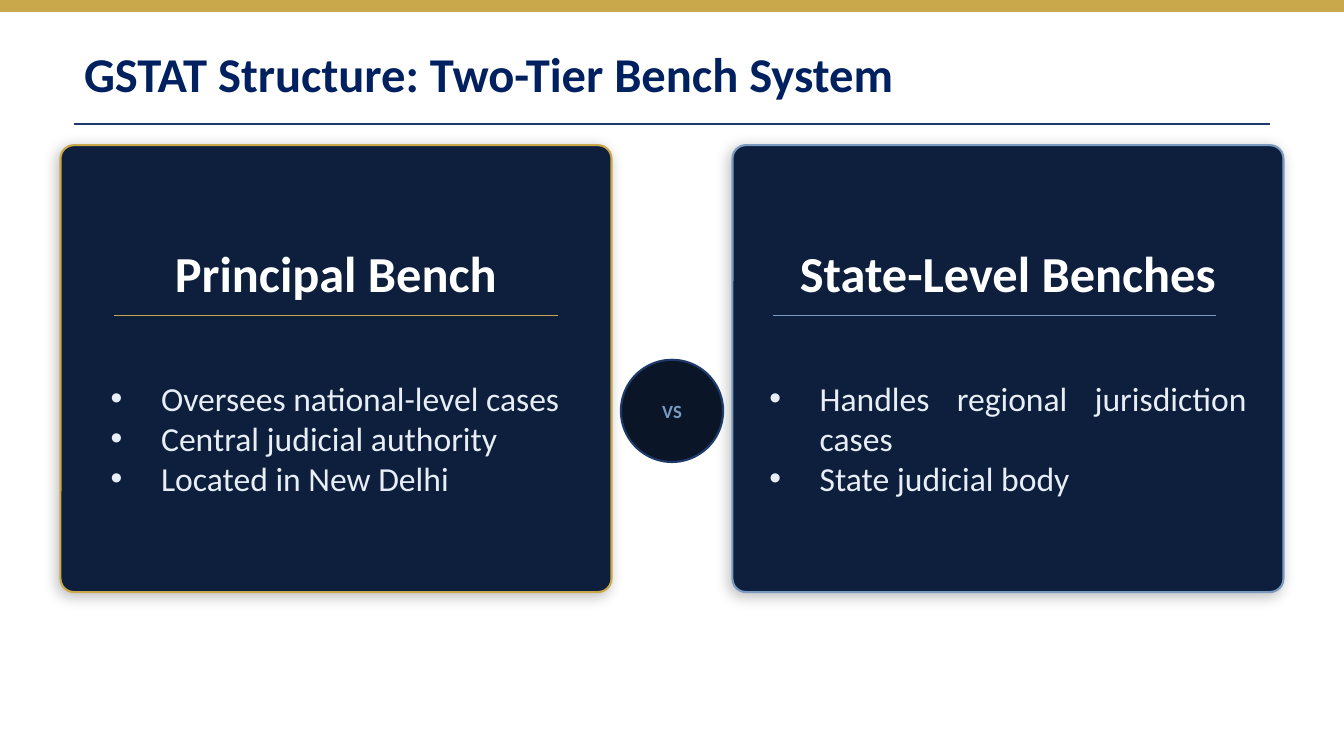
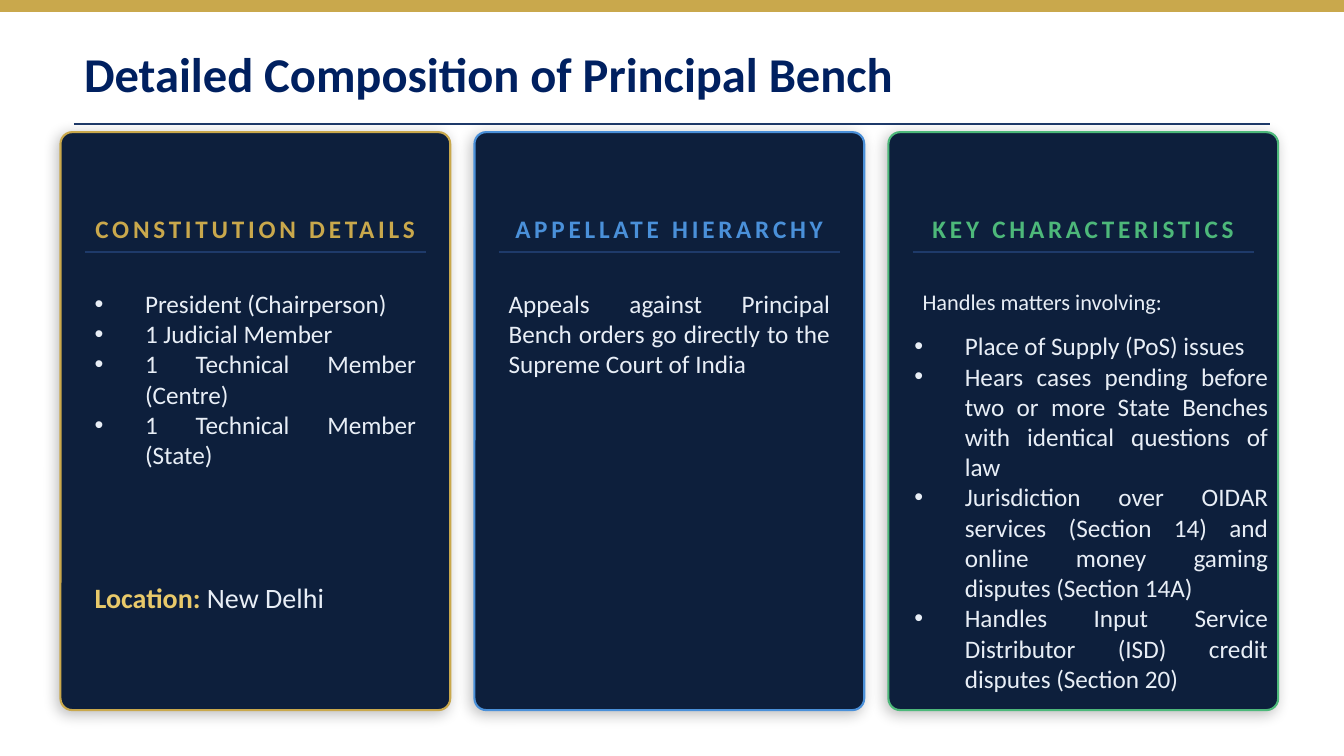
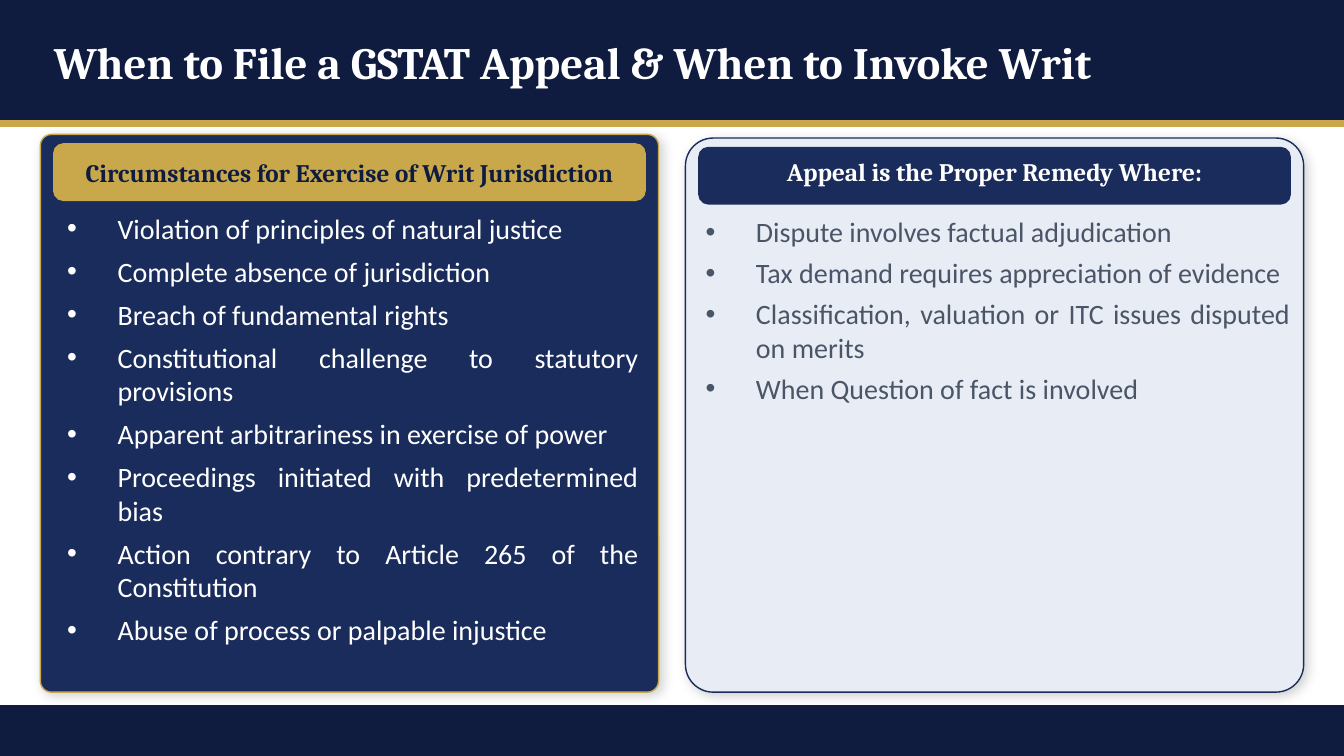
from dataclasses import dataclass

from lxml import etree
from pptx import Presentation
from pptx.dml.color import RGBColor
from pptx.enum.shapes import MSO_CONNECTOR, MSO_SHAPE
from pptx.enum.text import MSO_ANCHOR, MSO_AUTO_SIZE, PP_ALIGN
from pptx.oxml.ns import qn
from pptx.util import Pt

RECT = MSO_SHAPE.RECTANGLE
ROUND = MSO_SHAPE.ROUNDED_RECTANGLE
OVAL = MSO_SHAPE.OVAL
LINE = MSO_CONNECTOR.STRAIGHT
TOP, MIDDLE = MSO_ANCHOR.TOP, MSO_ANCHOR.MIDDLE
LEFT, CENTER, FULL = PP_ALIGN.LEFT, PP_ALIGN.CENTER, PP_ALIGN.JUSTIFY
WIDE, HIGH = 960, 540


@dataclass(frozen=True)
class Theme:
    sans: str = "Calibri"
    serif: str = "Cambria"
    white: str = "FFFFFF"
    gold: str = "C9A84C"
    amber: str = "E8C96A"
    title: str = "002060"
    rule: str = "1E3A6A"
    card: str = "0D1F3C"
    disc: str = "0A1628"
    steel: str = "7A9ABF"
    blue: str = "4A90D9"
    green: str = "4DB87A"
    pale: str = "E8EEF6"
    navy: str = "0F1C3F"
    royal: str = "1A2C5B"
    mist: str = "E8EDF5"
    slate: str = "4A5568"
    huge: float = 36
    head: float = 34.7
    banner: float = 32
    large: float = 24
    mid: float = 20
    base: float = 18
    small: float = 16
    tiny: float = 13.3


T = Theme()
DEEP = dict(alpha=25, blur=10, dist=3, angle=135)
SOFT = dict(alpha=18, blur=8, dist=3, angle=45)
FLUSH = (0, 0, 0, 0)
INSET = (7.2, 3.6, 7.2, 3.6)


def apply(item, vals):
    for key, val in vals.items():
        setattr(item, key, val)


def look(size, color, bold=False, name=T.sans):
    return dict(size=Pt(size), bold=bold, name=name, color=color)


def add_run(para, words, face, track=0):
    run = para.add_run()
    run.text = words
    apply(run.font, {k: v for k, v in face.items() if k != "color"})
    run.font.color.rgb = RGBColor.from_string(face["color"])
    if track:
        run.font._element.set("spc", str(round(track * 100)))


def add_dot(para):
    props = para._p.get_or_add_pPr()
    props.set("marL", str(Pt(36)))
    props.set("indent", str(-Pt(36)))
    etree.SubElement(props, qn("a:buFont")).set("typeface", "Arial")
    etree.SubElement(props, qn("a:buChar")).set("char", "•")


def write(frame, rows, face, align=LEFT, anchor=TOP, pad=INSET, dots=False, after=0, track=0):
    sides = ("margin_left", "margin_top", "margin_right", "margin_bottom")
    apply(frame, dict(word_wrap=True, auto_size=MSO_AUTO_SIZE.NONE, vertical_anchor=anchor))
    apply(frame, {side: Pt(gap) for side, gap in zip(sides, pad)})
    for i, row in enumerate(rows):
        para = frame.add_paragraph() if i else frame.paragraphs[0]
        if dots:
            add_dot(para)
        apply(para, dict(alignment=align, space_after=Pt(after)))
        for words, style in [(row, face)] if isinstance(row, str) else row:
            add_run(para, words, style, track)


def add_text(slide, box, rows, face, **opts):
    shape = slide.shapes.add_textbox(*map(Pt, box))
    write(shape.text_frame, rows, face, **opts)


def add_list(slide, box, rows, face, **opts):
    add_text(slide, box, rows, face, align=FULL, dots=True, **opts)


def add_shade(shape, alpha, blur, dist, angle):
    effects = shape._element.spPr.find(qn("a:effectLst"))
    shade = etree.SubElement(effects, qn("a:outerShdw"))
    vals = dict(blurRad=Pt(blur), dist=Pt(dist), dir=angle * 60000, algn="bl", rotWithShape=0)
    for key, val in vals.items():
        shade.set(key, str(val))
    color = etree.SubElement(shade, qn("a:srgbClr"))
    color.set("val", "000000")
    etree.SubElement(color, qn("a:alpha")).set("val", str(alpha * 1000))


def add_shape(slide, kind, box, fill, edge=None, width=1, bend=None, shade=None):
    shape = slide.shapes.add_shape(kind, *map(Pt, box))
    shape.shadow.inherit = False
    shape.fill.solid()
    shape.fill.fore_color.rgb = RGBColor.from_string(fill)
    shape.line.color.rgb = RGBColor.from_string(edge or fill)
    shape.line.width = Pt(width)
    if bend is not None:
        shape.adjustments[0] = bend
    if shade:
        add_shade(shape, **shade)
    return shape


def add_rule(slide, x, y, w, color, width=0.75):
    rule = slide.shapes.add_connector(LINE, Pt(x), Pt(y), Pt(x + w), Pt(y))
    rule.line.color.rgb = RGBColor.from_string(color)
    rule.line.width = Pt(width)
    etree.SubElement(rule._element.spPr, qn("a:effectLst"))


def add_title(slide, box, words, face, pad=INSET):
    title = slide.shapes.title
    apply(title, dict(zip(("left", "top", "width", "height"), map(Pt, box))))
    write(title.text_frame, [words], face, anchor=MIDDLE, pad=pad)
    title.element.getparent().append(title.element)


def new_slide(deck):
    return deck.slides.add_slide(deck.slide_layouts[5])


def light_slide(deck, words):
    slide = new_slide(deck)
    add_shape(slide, RECT, (0, 0, WIDE, 8), T.gold)
    add_title(slide, (52.8, 21, 854.4, 62.4), words, look(T.head, T.title, True))
    add_rule(slide, 52.8, 88.6, 854.4, T.rule, 1)
    return slide


def dark_card(slide, box, edge, bend):
    add_shape(slide, ROUND, box, T.card, edge, 1.5, bend, DEEP)


def bench_card(slide, x, edge, head, rows, side, inset):
    w = 393.6
    dark_card(slide, (x, 103.7, w, 319.2), edge, 0.03)
    add_text(slide, (x + side, 172.8, w - 2 * side, 43.2), [head],
             look(T.huge, T.white, True), align=CENTER, anchor=MIDDLE)
    add_rule(slide, x + inset + 9.6, 225.5, 316.8, edge)
    add_list(slide, (x + inset, 245.6, w - 2 * inset, 134.4), rows,
             look(T.large, T.pale), anchor=MIDDLE)


def bench_slide(deck):
    slide = light_slide(deck, "GSTAT Structure: Two-Tier Bench System")
    cards = [
        (T.gold, "Principal Bench",
         ["Oversees national-level cases", "Central judicial authority", "Located in New Delhi"],
         14.4, 28.8),
        (T.steel, "State-Level Benches",
         ["Handles regional jurisdiction cases", "State judicial body"], 9.6, 19.2),
    ]
    for i, card in enumerate(cards):
        bench_card(slide, 43.2 + 480 * i, *card)
    disc = add_shape(slide, OVAL, (443.5, 257, 73, 73), T.disc, T.rule, 1.5)
    write(disc.text_frame, ["VS"], look(T.tiny, T.steel, True), align=CENTER, anchor=MIDDLE)


def panel_slide(deck):
    slide = light_slide(deck, "Detailed Composition of Principal Bench")
    heads = [(T.gold, "CONSTITUTION DETAILS"), (T.blue, "APPELLATE HIERARCHY"),
             (T.green, "KEY CHARACTERISTICS")]
    lefts = [43.2 + 295.7 * i for i in range(len(heads))]
    for x, (color, head) in zip(lefts, heads):
        dark_card(slide, (x, 94.4, 278.4, 412.8), color, 0.03)
        add_text(slide, (x + 11.5, 149, 255.4, 28.8), [head],
                 look(T.base, color, True), align=CENTER, anchor=MIDDLE, track=2.7)
        add_rule(slide, x + 17.3, 180, 243.8, T.rule)

    face = look(T.base, T.pale)
    first, second, third = [x + 17.3 for x in lefts]
    add_list(slide, (first, 202.4, 243.8, 146.4),
             ["President (Chairperson)", "1 Judicial Member",
              "1 Technical Member (Centre)", "1 Technical Member (State)"], face)
    place = [("Location: ", look(T.mid, T.amber, True)), ("New Delhi", look(T.mid, T.pale))]
    add_text(slide, (first, 406.8, 243.8, 40.3), [place], face, anchor=MIDDLE)
    add_text(slide, (second, 202.4, 243.8, 97.6),
             ["Appeals against Principal Bench orders go directly to the Supreme Court of India"],
             face, align=FULL)
    add_text(slide, (third, 202.4, 243.8, 51.8), ["Handles matters involving:"],
             look(T.small, T.pale))
    add_list(slide, (lefts[2] + 11.5, 232.6, 266.9, 274.4),
             ["Place of Supply (PoS) issues",
              "Hears cases pending before two or more State Benches with identical questions of law",
              "Jurisdiction over OIDAR services (Section 14) and online money gaming disputes "
              "(Section 14A)",
              "Handles Input Service Distributor (ISD) credit disputes (Section 20)"], face)


def remedy_card(slide, x, y, fill, edge, bend, head, ink, lift, rows, body, inset, w, after):
    add_shape(slide, ROUND, (x, y, 441.6, 494.4 - y), fill, edge, 1, bend, SOFT)
    bar = add_shape(slide, ROUND, (x + 9.6, y + 6.8, 422.4, 40.3), edge, bend=0.17)
    write(bar.text_frame, [head], look(T.base, ink, True, T.serif),
          align=CENTER, anchor=MIDDLE, pad=(0, 0, 0, 2 * lift))
    add_list(slide, (x + inset, y + 54.8, w, 331.2), rows, look(T.mid, body),
             pad=FLUSH, after=after)


def remedy_slide(deck):
    slide = new_slide(deck)
    add_shape(slide, RECT, (0, 0, WIDE, 86.4), T.navy)
    add_shape(slide, RECT, (0, 86.4, WIDE, 3.8), T.gold)
    add_title(slide, (38.4, 4.8, 883.2, 78.4),
              "When to File a GSTAT Appeal & When to Invoke Writ",
              look(T.banner, T.white, True, T.serif), FLUSH)
    remedy_card(slide, 28.8, 96, T.royal, T.gold, 0.02,
                "Circumstances for Exercise of Writ Jurisdiction", T.navy, 0,
                ["Violation of principles of natural justice",
                 "Complete absence of jurisdiction",
                 "Breach of fundamental rights",
                 "Constitutional challenge to statutory provisions",
                 "Apparent arbitrariness in exercise of power",
                 "Proceedings initiated with predetermined bias",
                 "Action contrary to Article 265 of the Constitution",
                 "Abuse of process or palpable injustice"], T.white, 19.2, 408, 6.7)
    remedy_card(slide, 489.6, 98.6, T.mist, T.royal, 0.05,
                "Appeal is the Proper Remedy Where:", T.white, 2.9,
                ["Dispute involves factual adjudication",
                 "Tax demand requires appreciation of evidence",
                 "Classification, valuation or ITC issues disputed on merits",
                 "When Question of fact is involved"], T.slate, 14.4, 417.6, 5.3)
    add_shape(slide, RECT, (0, 504, WIDE, 36), T.navy)


def main():
    deck = Presentation()
    apply(deck, dict(slide_width=Pt(WIDE), slide_height=Pt(HIGH)))
    for build in (bench_slide, panel_slide, remedy_slide):
        build(deck)
    deck.save("out.pptx")


if __name__ == "__main__":
    main()
